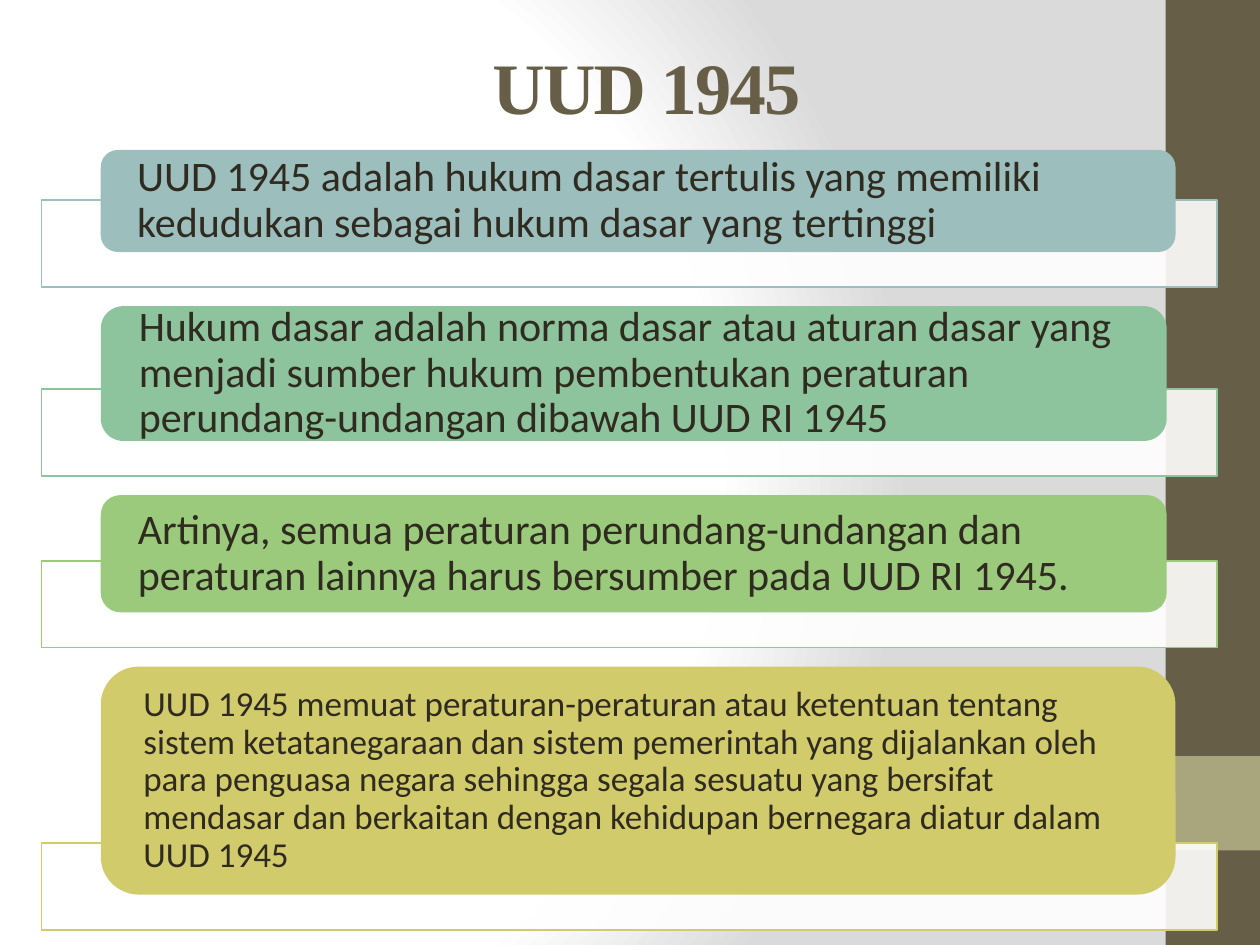
from lxml import etree
from pptx import Presentation
from pptx.dml.color import RGBColor
from pptx.enum.shapes import MSO_SHAPE
from pptx.enum.text import MSO_ANCHOR, PP_ALIGN
from pptx.oxml import parse_xml
from pptx.oxml.ns import nsdecls, qn
from pptx.util import Inches, Pt

RECT, ROUNDED = MSO_SHAPE.RECTANGLE, MSO_SHAPE.ROUNDED_RECTANGLE
MIDDLE, LEFT, CENTER = MSO_ANCHOR.MIDDLE, PP_ALIGN.LEFT, PP_ALIGN.CENTER
W, H = 10, 7.5
BROWN, KHAKI, INK = "675E47", "A9A57C", "2F2B20"


def rgb(value):
    return RGBColor.from_string(value)


def add_block(kind, x, y, w, h, fill, line=None):
    sp = s.shapes.add_shape(kind, Inches(x), Inches(y), Inches(w), Inches(h))
    sp.shadow.inherit = False
    sp.fill.solid()
    sp.fill.fore_color.rgb = rgb(fill)
    if line:
        sp.line.color.rgb = rgb(line)
        sp.line.width = Pt(1)
    else:
        sp.line.fill.background()
    return sp


prs = Presentation()
prs.slide_width, prs.slide_height = Inches(W), Inches(H)
s = prs.slides.add_slide(prs.slide_layouts[6])

# Background: circular gradient from white to grey
s.background.fill.gradient()
grad = s.element.find(".//" + qn("a:gradFill"))
stops = "".join(
    f'<a:gs pos="{pos * 1000}"><a:srgbClr val="{color}"/></a:gs>'
    for pos, color in ((0, "FFFFFF"), (75, "FFFFFF"), (100, "DADADA")))
grad.getparent().replace(grad, parse_xml(
    f'<a:gradFill rotWithShape="1" {nsdecls("a")}><a:gsLst>{stops}</a:gsLst>'
    '<a:path path="circle"><a:fillToRect l="20000" t="50000" r="100000" b="50000"/>'
    '</a:path></a:gradFill>'))

# Side band with its lighter square
band = 0.075 * W
add_block(RECT, W - band, 0, band, H, BROWN)
add_block(RECT, W - band, 0.8 * H, band, band, KHAKI)

# Title
tf = s.shapes.add_textbox(Inches(0.67), Inches(0.33), Inches(8.92), Inches(0.7)).text_frame
tf.word_wrap = True
tf.vertical_anchor = MIDDLE
p = tf.paragraphs[0]
p.text = "UUD 1945"
p.alignment = CENTER
r = p.runs[0]
r.font.name, r.font.size, r.font.bold = "Times New Roman", Pt(41.4), True
r.font.color.rgb = rgb(BROWN)
r.font._element.set("spc", "-100")

# Stacked statements: a rounded box over a translucent bar
# colour, box width, box height, text size, text
statements = [
    ("9CBEBD", 8.53, 0.81, 24, "UUD 1945 adalah hukum dasar tertulis yang memiliki "
     "kedudukan sebagai hukum dasar yang tertinggi"),
    ("8DC49D", 8.46, 1.07, 24, "Hukum dasar adalah norma dasar atau aturan dasar yang "
     "menjadi sumber hukum pembentukan peraturan perundang-undangan dibawah UUD RI 1945"),
    ("9BCA7D", 8.46, 0.93, 24, "Artinya, semua peraturan perundang-undangan dan "
     "peraturan lainnya harus bersumber pada UUD RI 1945."),
    ("D2CB6C", 8.53, 1.81, 20, "UUD 1945 memuat peraturan-peraturan atau ketentuan tentang "
     "sistem ketatanegaraan dan sistem pemerintah yang dijalankan oleh para penguasa negara "
     "sehingga segala sesuatu yang bersifat mendasar dan berkaitan dengan kehidupan "
     "bernegara diatur dalam UUD 1945"),
]
bar_x, bar_w, bar_h = 0.33, 9.33, 0.69
box_x, overlap, gap = 0.8, 0.41, 0.15
top = 1.19
for color, box_w, box_h, size, text in statements:
    bar_top = top + box_h - overlap
    bar = add_block(RECT, bar_x, bar_top, bar_w, bar_h, "FFFFFF", color)
    fill_color = bar.fill._xPr.find(qn("a:solidFill"))[0]
    etree.SubElement(fill_color, qn("a:alpha")).set("val", "90000")

    box = add_block(ROUNDED, box_x, top, box_w, box_h, color)
    tf = box.text_frame
    tf.word_wrap = True
    tf.vertical_anchor = MIDDLE
    tf.margin_left = tf.margin_right = Inches(0.25)
    tf.margin_top = tf.margin_bottom = 0
    p = tf.paragraphs[0]
    p.text = text
    p.alignment = LEFT
    p.line_spacing = 0.9
    r = p.runs[0]
    r.font.name, r.font.size = "Calibri", Pt(size)
    r.font.color.rgb = rgb(INK)
    top = bar_top + bar_h + gap

prs.save("out.pptx")
